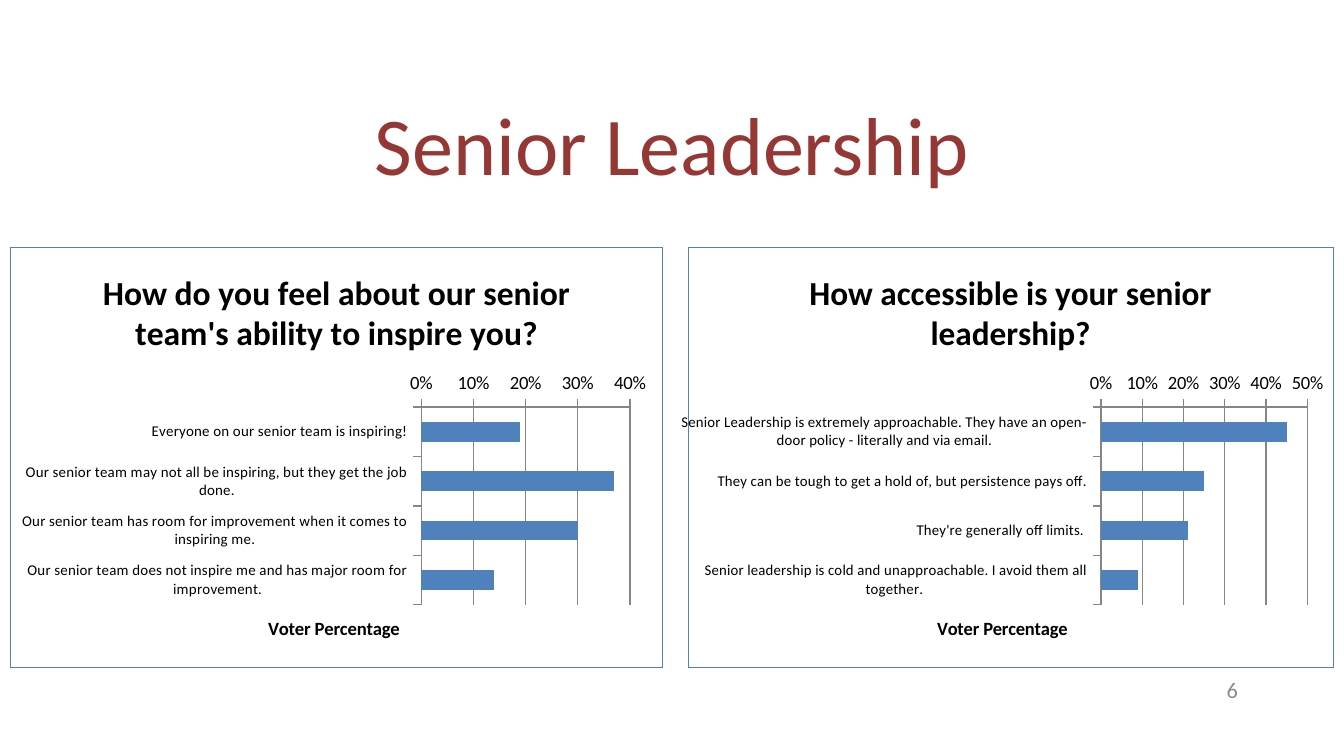
"""Build the Senior Leadership slide with two survey bar charts."""
from lxml import etree
from pptx import Presentation
from pptx import util as u
from pptx.chart.data import CategoryChartData
from pptx.dml.color import RGBColor
from pptx.enum import chart as ch, text
from pptx.oxml import parse_xml
from pptx.oxml.ns import nsdecls, qn

HEADING = "Senior Leadership"
PAGE = "6"
AXIS_TITLE = "Voter Percentage"
SURVEYS = [
    ("How do you feel about our senior team's ability to inspire you?", 0.4, 0.63, [
        ("Everyone on our senior team is inspiring!", 0.19),
        ("Our senior team may not all be inspiring, but they get the job done.", 0.37),
        ("Our senior team has room for improvement when it comes to inspiring me.", 0.3),
        ("Our senior team does not inspire me and has major room for improvement.", 0.14),
    ]),
    ("How accessible is your senior leadership?", 0.5, 0.64, [
        ("Senior Leadership is extremely approachable. They have an open-door policy"
         " - literally and via email.", 0.45),
        ("They can be tough to get a hold of, but persistence pays off.", 0.25),
        ("They're generally off limits. ", 0.21),
        ("Senior leadership is cold and unapproachable. I avoid them all together. ", 0.09),
    ]),
]
BLUE, GRID, BLACK = "4F81BD", "868686", "000000"
SLIDE_WIDTH, CHART_WIDTH, CHART_HEIGHT, MARGIN = 10, 4.85, 3.13, 0.08


def style(font, size, color, bold=False):
    font.name, font.size, font.bold = "Calibri", u.Pt(size), bold
    font.color.rgb = RGBColor.from_string(color)


def caption(owner, words, size):
    frame = owner.text_frame
    frame.text = words
    style(frame.paragraphs[0].font, size, BLACK, True)


def frame_chart(chart):
    border = parse_xml(
        f'<c:spPr {nsdecls("c", "a")}><a:noFill/><a:ln><a:solidFill>'
        f'<a:srgbClr val="{BLUE}"/></a:solidFill></a:ln></c:spPr>')
    chart._chartSpace.find(qn("c:chart")).addnext(border)


def place_plot(chart, plot_left):
    area = chart._chartSpace.find(qn("c:chart")).find(qn("c:plotArea"))
    layout = area.find(qn("c:layout"))
    if layout is None:
        layout = etree.Element(qn("c:layout"))
        area.insert(0, layout)
    manual = etree.SubElement(layout, qn("c:manualLayout"))
    settings = {"layoutTarget": "inner", "xMode": "edge", "yMode": "edge",
                "x": plot_left, "y": 0.38, "w": 0.32, "h": 0.47}
    for tag, value in settings.items():
        etree.SubElement(manual, qn(f"c:{tag}")).set("val", str(value))


def add_survey(slide, left, question, top_value, plot_left, answers):
    data = CategoryChartData(number_format="0%")
    data.categories = [answer for answer, _ in answers]
    data.add_series("Series 1", [share for _, share in answers])
    chart = slide.shapes.add_chart(
        ch.XL_CHART_TYPE.BAR_CLUSTERED, u.Inches(left), u.Inches(1.84),
        u.Inches(CHART_WIDTH), u.Inches(CHART_HEIGHT), data).chart
    style(chart.font, 10, BLACK)
    chart.has_legend = False
    caption(chart.chart_title, question, 18)
    chart.chart_title.include_in_layout = False

    answer_axis, share_axis = chart.category_axis, chart.value_axis
    answer_axis.reverse_order = True
    style(answer_axis.tick_labels.font, 8, BLACK)
    share_axis.minimum_scale, share_axis.maximum_scale = 0, top_value
    share_axis.major_unit = 0.1
    share_axis.has_major_gridlines = True
    share_axis.tick_labels.number_format = "0%"
    share_axis.tick_labels.number_format_is_linked = False
    caption(share_axis.axis_title, AXIS_TITLE, 10)
    for axis in (answer_axis, share_axis):
        axis.major_tick_mark = ch.XL_TICK_MARK.OUTSIDE
    for ruled in (answer_axis, share_axis, share_axis.major_gridlines):
        ruled.format.line.color.rgb = RGBColor.from_string(GRID)

    bars = chart.plots[0]
    bars.gap_width, bars.vary_by_categories = 150, False
    fill = bars.series[0].format.fill
    fill.solid()
    fill.fore_color.rgb = RGBColor.from_string(BLUE)
    place_plot(chart, plot_left)
    frame_chart(chart)


def write(shape, box, words, size, color, align):
    shape.left, shape.top, shape.width, shape.height = map(u.Inches, box)
    frame = shape.text_frame
    frame.word_wrap = True
    frame.vertical_anchor = text.MSO_ANCHOR.MIDDLE
    frame.text = words
    paragraph = frame.paragraphs[0]
    paragraph.alignment = align
    style(paragraph.font, size, color)
    return paragraph


def main():
    deck = Presentation()
    deck.slide_width = u.Inches(SLIDE_WIDTH)
    deck.slide_height = u.Inches(SLIDE_WIDTH * 9 / 16)
    slide = deck.slides.add_slide(deck.slide_layouts[5])
    heading = write(slide.shapes.title, (0.69, 0.56, 8.62, 1.09), HEADING, 44,
                    "953735", text.PP_ALIGN.CENTER)
    heading.line_spacing = 0.9
    lefts = (MARGIN, SLIDE_WIDTH - MARGIN - CHART_WIDTH)
    for left, survey in zip(lefts, SURVEYS):
        add_survey(slide, left, *survey)
    write(slide.shapes.add_textbox(0, 0, 0, 0), (7.06, 4.98, 2.25, 0.3), PAGE, 12,
          "8C8C8C", text.PP_ALIGN.RIGHT)
    deck.save("out.pptx")


if __name__ == "__main__":
    main()
